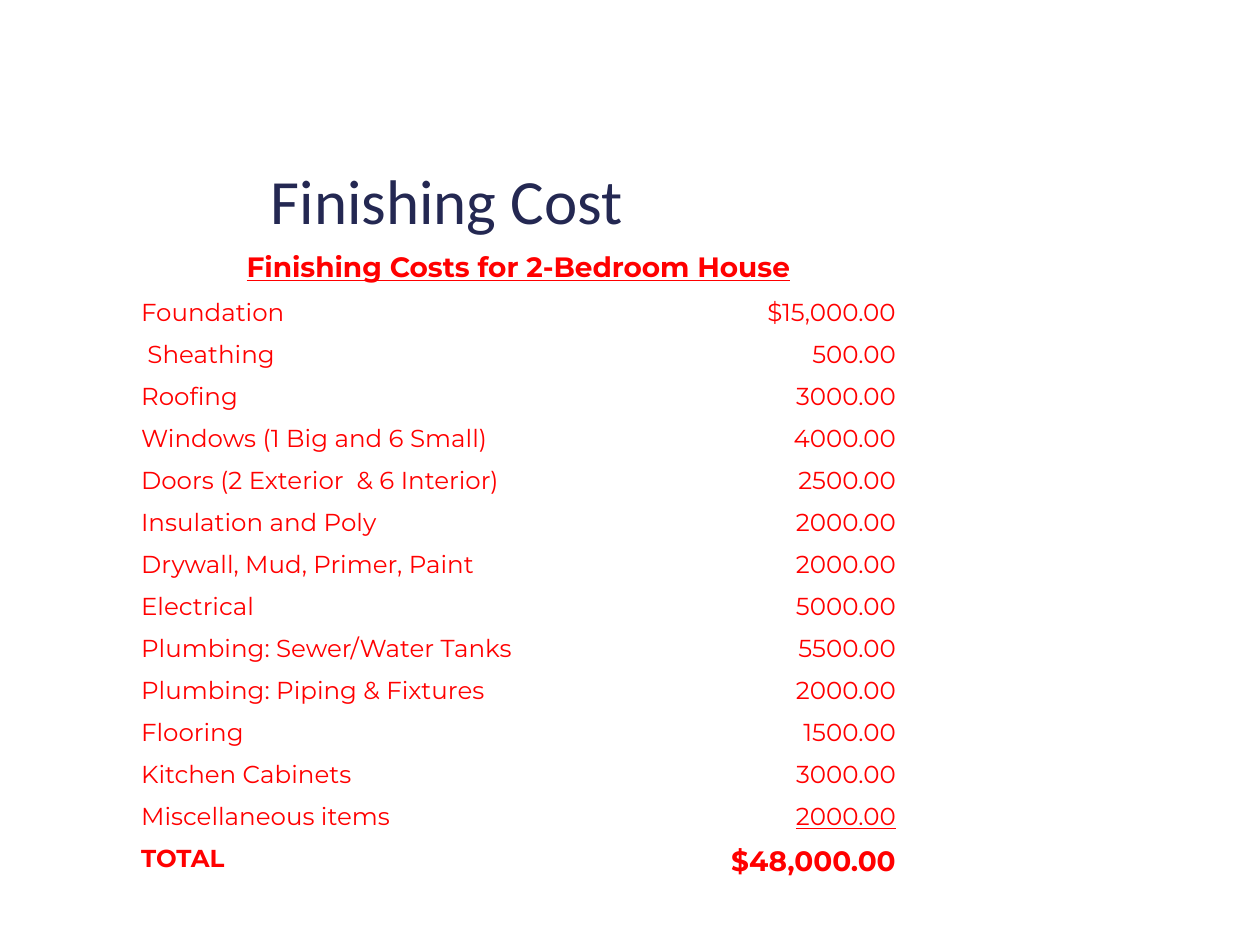
from dataclasses import dataclass

from pptx import Presentation
from pptx.dml.color import RGBColor
from pptx.enum.text import MSO_ANCHOR, PP_ALIGN
from pptx.table import _Cell
from pptx.text.text import _Paragraph
from pptx.util import Inches, Pt

NAVY, RED = "242852", "FF0000"
HANGING = Inches(0.38)
LABEL_WIDTH, AMOUNT_WIDTH = 4.21, 1.92
TALL_ROW, ITEM_ROW = 0.37, 0.33


@dataclass(frozen=True)
class Style:
    size: int = 14
    font: str = "Montserrat"
    color: str = RED
    bold: bool = False
    underline: bool = False


@dataclass(frozen=True)
class Cost:
    label: str
    amount: str
    label_style: Style = Style()
    amount_style: Style = Style()


TITLE = Style(36, "Calibri", NAVY)
HEADING = Style(16, bold=True, underline=True)

COSTS = [
    Cost("Foundation", "$15,000.00"),
    Cost(" Sheathing", "500.00"),
    Cost("Roofing", "3000.00"),
    Cost("Windows (1 Big and 6 Small)", "4000.00"),
    Cost("Doors (2 Exterior  & 6 Interior)", "2500.00"),
    Cost("Insulation and Poly", "2000.00"),
    Cost("Drywall, Mud, Primer, Paint", "2000.00"),
    Cost("Electrical", "5000.00"),
    Cost("Plumbing: Sewer/Water Tanks", "5500.00"),
    Cost("Plumbing: Piping & Fixtures", "2000.00"),
    Cost("Flooring", "1500.00"),
    Cost("Kitchen Cabinets", "3000.00"),
    Cost("Miscellaneous items", "2000.00", amount_style=Style(underline=True)),
    Cost("TOTAL", "$48,000.00", Style(bold=True), Style(16, bold=True)),
]


def rgb(color: str) -> RGBColor:
    return RGBColor.from_string(color)


def write(paragraph: _Paragraph, text: str, style: Style, align: PP_ALIGN) -> None:
    paragraph.text = text
    paragraph.alignment = align
    for run in paragraph.runs:
        run.font.size = Pt(style.size)
        run.font.name = style.font
        run.font.color.rgb = rgb(style.color)
        run.font.bold = style.bold
        run.font.underline = style.underline


def fill_cell(cell: _Cell, text: str, style: Style, align: PP_ALIGN) -> None:
    cell.fill.background()
    cell.margin_left = cell.margin_right = Inches(0.07)
    cell.margin_top = cell.margin_bottom = Inches(0.05)
    paragraph = cell.text_frame.paragraphs[0]
    write(paragraph, text, style, align)
    # Hanging indent
    properties = paragraph._p.get_or_add_pPr()
    properties.set("marL", str(HANGING))
    properties.set("indent", str(-HANGING))


def main() -> None:
    deck = Presentation()
    deck.slide_width, deck.slide_height = Inches(10), Inches(7.5)
    slide = deck.slides.add_slide(deck.slide_layouts[6])

    # Title
    title = slide.shapes.add_textbox(
        Inches(2.05), Inches(0.68), Inches(6.19), Inches(1.25)
    ).text_frame
    title.word_wrap = True
    title.vertical_anchor = MSO_ANCHOR.BOTTOM
    write(title.paragraphs[0], "Finishing Cost", TITLE, PP_ALIGN.LEFT)
    title.paragraphs[0].space_before = Pt(4)

    # Cost table: a heading row, the items and the total
    heights = [TALL_ROW] + [ITEM_ROW] * (len(COSTS) - 1) + [TALL_ROW]
    table = slide.shapes.add_table(
        len(heights), 2, Inches(1.05), Inches(1.94),
        Inches(LABEL_WIDTH + AMOUNT_WIDTH), Inches(sum(heights)),
    ).table
    table.first_row = table.horz_banding = False
    for column, width in zip(table.columns, (LABEL_WIDTH, AMOUNT_WIDTH)):
        column.width = Inches(width)
    for row, height in zip(table.rows, heights):
        row.height = Inches(height)

    heading = table.cell(0, 0)
    heading.merge(table.cell(0, 1))
    fill_cell(heading, "Finishing Costs for 2-Bedroom House", HEADING, PP_ALIGN.CENTER)
    for index, cost in enumerate(COSTS, start=1):
        fill_cell(table.cell(index, 0), cost.label, cost.label_style, PP_ALIGN.LEFT)
        fill_cell(table.cell(index, 1), cost.amount, cost.amount_style, PP_ALIGN.RIGHT)

    deck.save("out.pptx")


if __name__ == "__main__":
    main()
